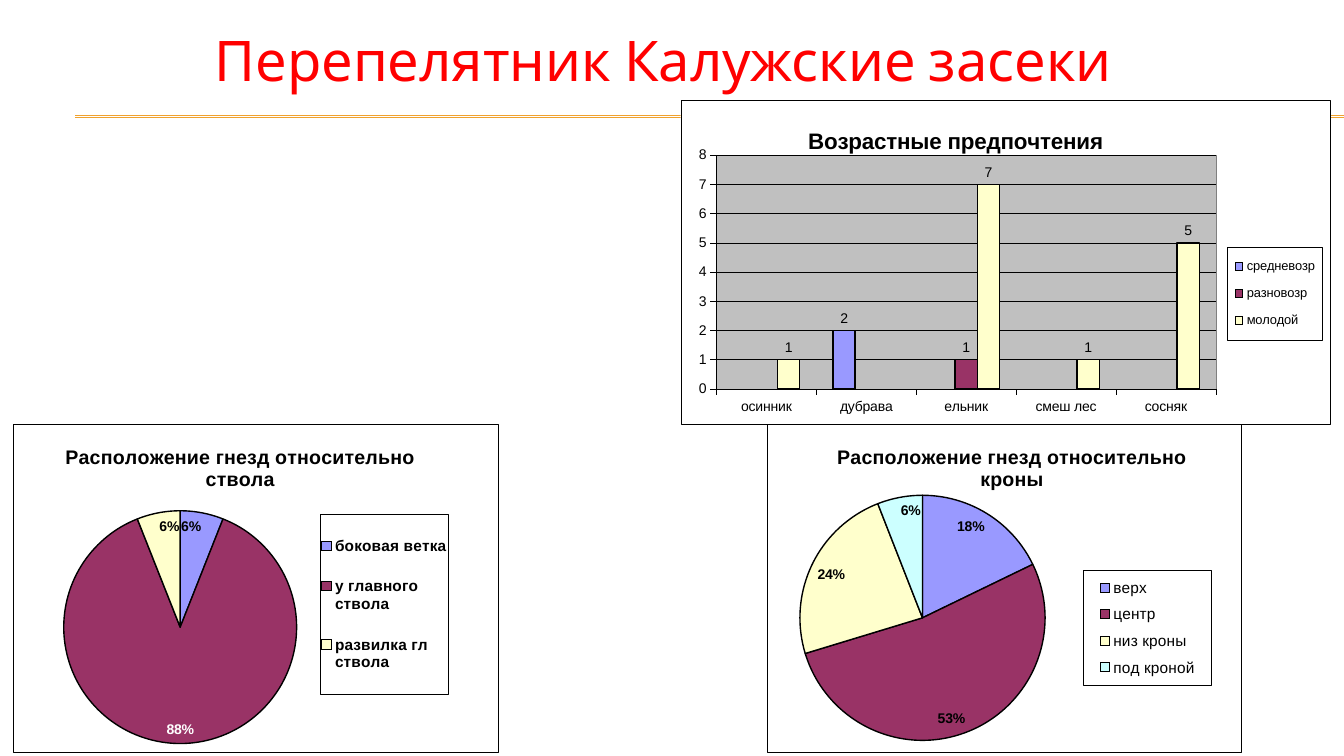
from copy import deepcopy

from lxml.etree import SubElement
from pptx import Presentation
from pptx.chart.data import CategoryChartData
from pptx.dml.color import RGBColor
from pptx.enum.chart import (XL_CHART_TYPE, XL_LABEL_POSITION,
                             XL_LEGEND_POSITION, XL_TICK_MARK)
from pptx.enum.shapes import MSO_CONNECTOR
from pptx.enum.text import PP_ALIGN
from pptx.oxml import parse_xml
from pptx.oxml.ns import nsdecls, qn
from pptx.util import Cm, Pt

LILAC, PLUM, CREAM, AQUA = "9999FF", "993366", "FFFFCC", "CCFFFF"
BLACK, WHITE = "000000", "FFFFFF"


def color(value):
    """Turn a hex string into a colour."""
    return RGBColor.from_string(value)


def style_font(font, size, bold=False, tint=BLACK, name="Arial"):
    """Set the look of a font."""
    font.size, font.bold, font.name = Pt(size), bold, name
    font.color.rgb = color(tint)


def style_line(line, tint=BLACK, width=0.25):
    """Set the colour and width of a line."""
    line.color.rgb = color(tint)
    line.width = Pt(width)


def style_bar(fill_format, tint):
    """Fill a bar or slice and outline it in black."""
    fill_format.fill.solid()
    fill_format.fill.fore_color.rgb = color(tint)
    style_line(fill_format.line, BLACK, 1)


def place(element, index, spots, inner=False):
    """Give a chart part a fixed position in fractions of the chart."""
    layout = element.find(qn("c:layout"))
    if layout is None:
        layout = parse_xml(f"<c:layout {nsdecls('c')}/>")
        element.insert(index, layout)
    manual = SubElement(layout, qn("c:manualLayout"))
    if inner:
        SubElement(manual, qn("c:layoutTarget")).set("val", "inner")
    for mode in ("xMode", "yMode"):
        SubElement(manual, qn(f"c:{mode}")).set("val", "edge")
    for key, spot in zip("xywh", spots):
        SubElement(manual, qn(f"c:{key}")).set("val", str(spot))


def panel(fill, border):
    """Return fill and outline properties for a chart region."""
    return parse_xml(
        f'<c:spPr {nsdecls("c", "a")}>'
        f'<a:solidFill><a:srgbClr val="{fill}"/></a:solidFill>'
        f'<a:ln w="{Pt(0.25)}"><a:solidFill><a:srgbClr val="{border}"/>'
        '</a:solidFill></a:ln></c:spPr>')


def add_framed_chart(page, box, kind, categories, series, title, spots, sizes, bold_legend=False):
    """Add a chart with a frame, a title and a boxed legend."""
    data = CategoryChartData()
    data.categories = categories
    for name, values in series:
        data.add_series(name, values)
    chart = page.shapes.add_chart(kind, *map(Cm, box), data).chart
    style_font(chart.font, 10)
    title_size, legend_size = sizes
    title_spot, plot_spot, legend_spot = spots

    para = chart.chart_title.text_frame.paragraphs[0]
    span = para.add_run()
    span.text = title
    style_font(span.font, title_size, True)
    chart.chart_title.include_text_in_layout = False

    chart.has_legend = True
    legend = chart.legend
    legend.position = XL_LEGEND_POSITION.RIGHT
    legend.include_in_layout = False
    style_font(legend.font, legend_size, bold_legend)

    space = chart.element
    area = space.chart.plotArea
    place(space.chart.find(qn("c:title")), 1, title_spot)
    place(area, 0, plot_spot, True)
    key = space.chart.find(qn("c:legend"))
    place(key, 1, legend_spot)
    key.find(qn("c:overlay")).addnext(panel(WHITE, BLACK))
    space.chart.addnext(panel(WHITE, BLACK))
    return chart


def add_age_chart(page, box):
    """Add the column chart of age preferences."""
    chart = add_framed_chart(
        page, box, XL_CHART_TYPE.COLUMN_CLUSTERED,
        ["осинник", "дубрава", "ельник", "смеш лес", "сосняк"],
        [("средневозр", [None, 2, None, None, None]),
         ("разновозр", [None, None, 1, None, None]),
         ("молодой", [1, None, 7, 1, 5])],
        "Возрастные предпочтения",
        [(0.19, 0.07), (0.055, 0.171, 0.769, 0.721), (0.842, 0.455, 0.146, 0.285)],
        (16, 9.2))
    plot = chart.plots[0]
    plot.gap_width, plot.overlap, plot.vary_by_categories = 150, 0, False
    for series, tint in zip(plot.series, (LILAC, PLUM, CREAM)):
        style_bar(series.format, tint)
        labels = series.data_labels
        labels.show_value = True
        labels.position = XL_LABEL_POSITION.OUTSIDE_END
        style_font(labels.font, 10)
    for axis in (chart.category_axis, chart.value_axis):
        axis.major_tick_mark = XL_TICK_MARK.OUTSIDE
        style_font(axis.tick_labels.font, 10)
        style_line(axis.format.line)
    scale = chart.value_axis
    scale.minimum_scale, scale.maximum_scale, scale.major_unit = 0, 8, 1
    style_line(scale.major_gridlines.format.line)
    chart.element.chart.plotArea.append(panel("C0C0C0", "808080"))


def add_nest_pie(page, box, title, shares, spots, bold_legend=False, white_slice=None):
    """Add a pie chart of nest positions."""
    chart = add_framed_chart(page, box, XL_CHART_TYPE.PIE, list(shares),
                             [("Series 1", list(shares.values()))],
                             title, spots, (14, 11), bold_legend)
    series = chart.plots[0].series[0]
    labels = series.data_labels
    labels.show_value = True
    labels.number_format = '0"%"'
    labels.number_format_is_linked = False
    labels.position = XL_LABEL_POSITION.INSIDE_END
    style_font(labels.font, 10, True)
    for index, tint in zip(range(len(shares)), (LILAC, PLUM, CREAM, AQUA)):
        style_bar(series.points[index].format, tint)
    if white_slice is not None:
        label = series.points[white_slice].data_label
        style_font(label.font, 10, True, WHITE)
        label.position = XL_LABEL_POSITION.INSIDE_END
        group = series.data_labels._element
        number_format = deepcopy(group.find(qn("c:numFmt")))
        group.find(qn("c:dLbl")).insert(1, number_format)


def add_heading(page, box):
    """Add the slide title in its box."""
    frame = page.shapes.add_textbox(*map(Cm, box)).text_frame
    frame.word_wrap = True
    para = frame.paragraphs[0]
    para.alignment = PP_ALIGN.CENTER
    span = para.add_run()
    span.text = "Перепелятник Калужские засеки"
    style_font(span.font, 40, None, "FF0000", "Karla")


def add_rules(page, left, right, heights):
    """Draw the horizontal rules under the heading."""
    for height in heights:
        rule = page.shapes.add_connector(
            MSO_CONNECTOR.STRAIGHT, Cm(left), Cm(height), Cm(right), Cm(height))
        style_line(rule.line, "F0A22E", 0.75)
        SubElement(rule._element.spPr, qn("a:effectLst"))


def main():
    """Build the slide and save it."""
    deck = Presentation()
    deck.slide_width, deck.slide_height = Cm(33.87), Cm(19.05)
    page = deck.slides.add_slide(deck.slide_layouts[6])
    add_rules(page, 1.9, 33.87, (2.92, 2.95))
    add_age_chart(page, (17.15, 2.51, 16.38, 8.18))
    add_nest_pie(
        page, (0.33, 10.69, 12.24, 8.26), "Расположение гнезд относительно ствола",
        {"боковая ветка": 6, "у главного ствола": 88, "развилка гл ствола": 6},
        [(0.1, 0.05), (0.104, 0.264, 0.48, 0.711), (0.632, 0.274, 0.265, 0.549)],
        bold_legend=True, white_slice=1)
    add_nest_pie(
        page, (19.33, 10.69, 11.96, 8.26), "Расположение гнезд относительно кроны",
        {"верх": 18, "центр": 53, "низ кроны": 24, "под кроной": 6},
        [(0.14, 0.05), (0.069, 0.216, 0.517, 0.75), (0.667, 0.445, 0.27, 0.351)])
    add_heading(page, (4.8, 0.53, 23.83, 1.96))
    deck.save("out.pptx")


if __name__ == "__main__":
    main()
